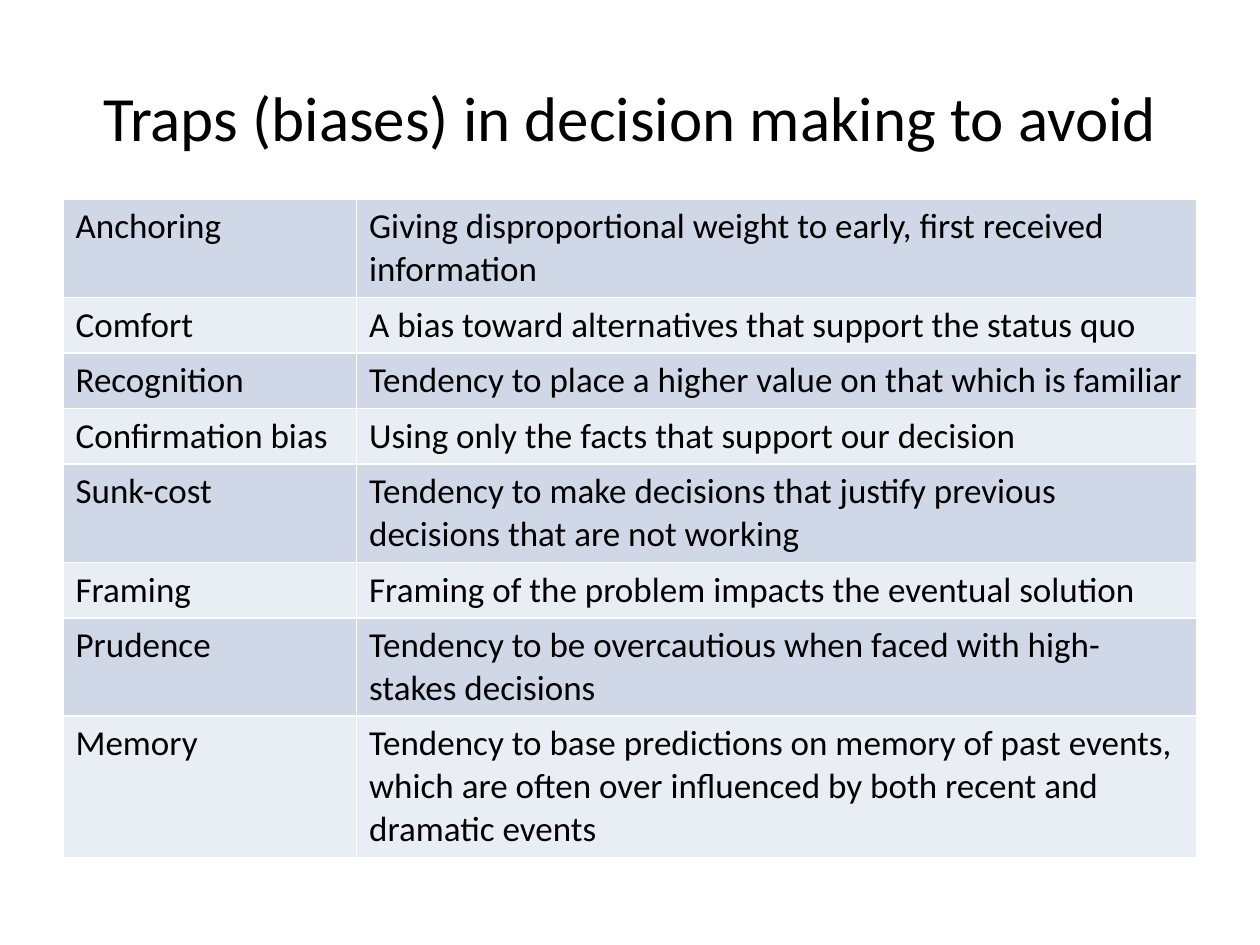
from lxml.etree import SubElement
from pptx import Presentation
from pptx.dml.color import RGBColor
from pptx.enum.text import MSO_ANCHOR, PP_ALIGN
from pptx.oxml.ns import qn
from pptx.util import Inches, Pt

FONT = "Calibri"
COLORS = {"text": "000000", "dark_band": "D0D8E8", "light_band": "E9EDF4", "border": "FFFFFF"}
MARGIN, CONTENT_W = 0.5, 9
COL_WIDTHS = (2.33, 6.67)
ROW_H = 0.41  # least height; rows grow with their text

TRAPS = [
    ("Anchoring", "Giving disproportional weight to early, first received information"),
    ("Comfort", "A bias toward alternatives that support the status quo"),
    ("Recognition", "Tendency to place a higher value on that which is familiar"),
    ("Confirmation bias", "Using only the facts that support our decision"),
    ("Sunk-cost", "Tendency to make decisions that justify previous decisions that are not working"),
    ("Framing", "Framing of the problem impacts the eventual solution"),
    ("Prudence", "Tendency to be overcautious when faced with high-stakes decisions"),
    ("Memory", "Tendency to base predictions on memory of past events, which are often "
               "over influenced by both recent and dramatic events"),
]


def color(name):
    return RGBColor.from_string(COLORS[name])


def set_font(p, size):
    p.font.name = FONT
    p.font.size = Pt(size)
    p.font.color.rgb = color("text")


def add_title(s, text):
    sp = s.shapes.title
    sp.left, sp.top = Inches(MARGIN), Inches(0.3)
    sp.width, sp.height = Inches(CONTENT_W), Inches(1.25)
    tf = sp.text_frame
    tf.text = text
    tf.vertical_anchor = MSO_ANCHOR.MIDDLE
    p = tf.paragraphs[0]
    p.alignment = PP_ALIGN.CENTER
    set_font(p, 36)


def set_borders(cell):
    tc_pr = cell._tc.get_or_add_tcPr()
    for side in ("L", "R", "T", "B"):
        ln = SubElement(tc_pr, qn(f"a:ln{side}"), w=str(Pt(1)))
        fill = SubElement(ln, qn("a:solidFill"))
        SubElement(fill, qn("a:srgbClr"), val=COLORS["border"])


def fill_cell(cell, text, band):
    cell.text = text
    set_font(cell.text_frame.paragraphs[0], 20)
    set_borders(cell)  # borders must precede the fill in the XML
    cell.fill.solid()
    cell.fill.fore_color.rgb = color(band)


def add_banded_table(s, rows):
    frame = s.shapes.add_table(len(rows), len(COL_WIDTHS), Inches(MARGIN), Inches(1.58),
                               Inches(CONTENT_W), Inches(ROW_H * len(rows)))
    table = frame.table
    table.first_row = False
    for col, width in zip(table.columns, COL_WIDTHS):
        col.width = Inches(width)
    for i, values in enumerate(rows):
        table.rows[i].height = Inches(ROW_H)
        band = "light_band" if i % 2 else "dark_band"
        for j, text in enumerate(values):
            fill_cell(table.cell(i, j), text, band)


def main():
    prs = Presentation()
    prs.slide_width, prs.slide_height = Inches(10), Inches(7.5)
    s = prs.slides.add_slide(prs.slide_layouts[5])  # title only
    add_title(s, "Traps (biases) in decision making to avoid")
    add_banded_table(s, TRAPS)
    prs.save("out.pptx")


if __name__ == "__main__":
    main()
